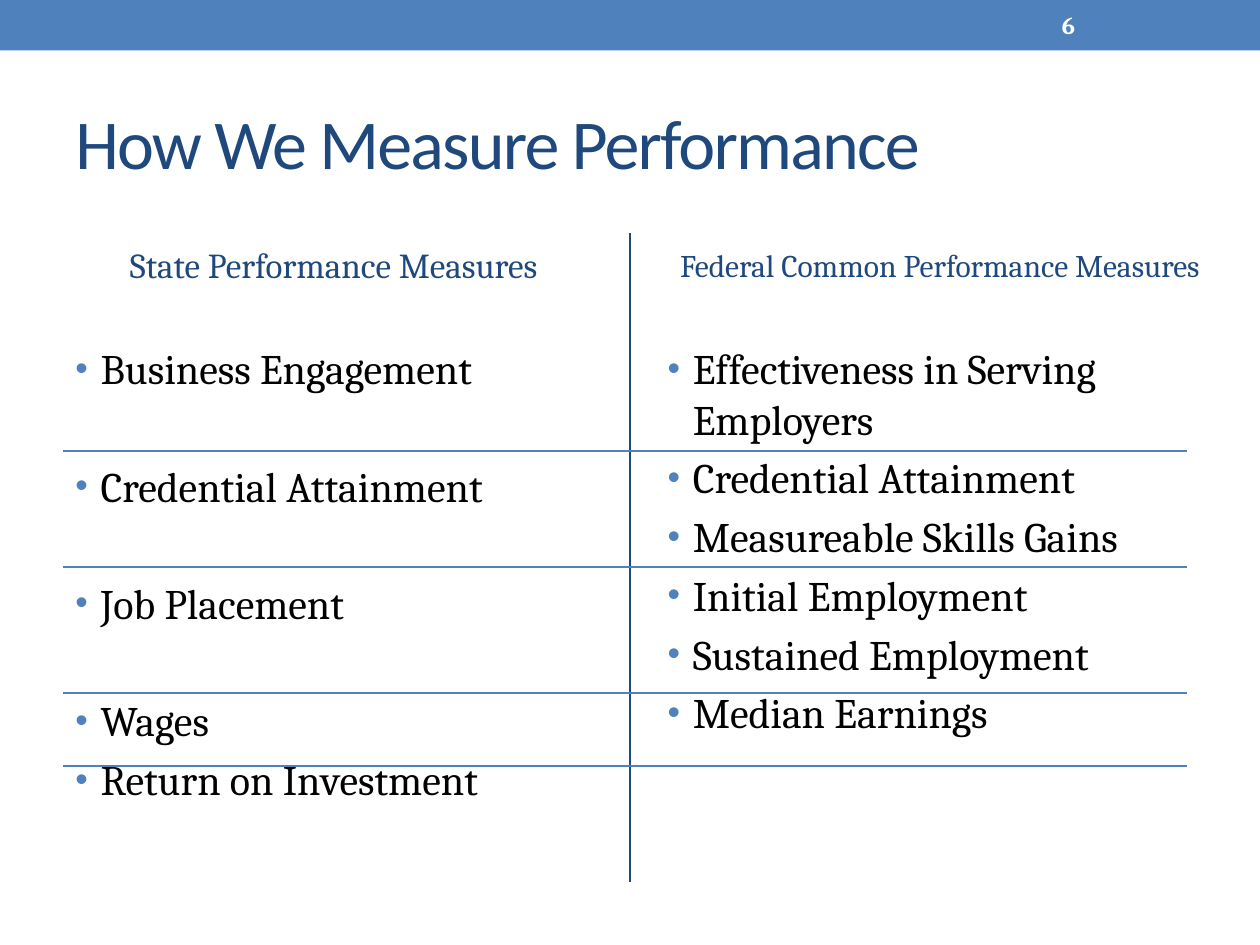
from dataclasses import dataclass

from lxml.etree import SubElement
from pptx import Presentation
from pptx.dml.color import RGBColor
from pptx.enum.shapes import MSO_CONNECTOR as Connector, MSO_SHAPE as Shape
from pptx.enum.text import MSO_ANCHOR as Anchor, PP_ALIGN as Align
from pptx.oxml.ns import qn
from pptx.util import Inches, Pt

TITLE = "How We Measure Performance"
PAGE_NUMBER = "6"
ROW_RULES = (3.58, 4.5, 5.5, 6.08)


@dataclass(frozen=True)
class Theme:
    blue: str = "4F81BD"
    navy: str = "1F497D"
    black: str = "000000"
    white: str = "FFFFFF"
    heading_font: str = "Calibri"
    body_font: str = "Cambria"
    title_size: float = 40
    body_size: float = 24
    number_size: float = 14
    tight_gap: float = 4.8
    row_gap: float = 38.3


THEME = Theme()

# Each item is its text and the space before it, in points.
COLUMNS = [
    {
        "heading": "State Performance Measures",
        "heading_area": (0.5, 1.75, 4.3, 0.7),
        "heading_size": 20,
        "list_area": (0.5, 2.67, 4.3, 4.32),
        "items": [
            ("Business Engagement", THEME.tight_gap),
            ("Credential Attainment", THEME.row_gap),
            ("Job Placement", THEME.row_gap),
            ("Wages", THEME.row_gap),
            ("Return on Investment", THEME.tight_gap),
        ],
    },
    {
        "heading": "Federal Common Performance Measures",
        "heading_area": (5.17, 1.75, 4.58, 0.7),
        "heading_size": 18,
        "list_area": (5.2, 2.67, 4.3, 4.32),
        "items": [
            (text, THEME.tight_gap)
            for text in (
                "Effectiveness in Serving Employers",
                "Credential Attainment",
                "Measureable Skills Gains",
                "Initial Employment",
                "Sustained Employment",
                "Median Earnings",
            )
        ],
    },
]


def color(value):
    return RGBColor.from_string(value)


def add_bullet(para):
    props = para._p.get_or_add_pPr()
    props.set("marL", str(Inches(0.2)))
    props.set("indent", str(Inches(-0.2)))
    bullet_color = SubElement(props, qn("a:buClr"))
    SubElement(bullet_color, qn("a:srgbClr"), val=THEME.blue)
    SubElement(props, qn("a:buSzPct"), val="85000")
    SubElement(props, qn("a:buFont"), typeface="Arial")
    SubElement(props, qn("a:buChar"), char="•")


def add_text(page, area, items, *, size, ink, font=THEME.body_font, bold=False,
             align=Align.LEFT, anchor=Anchor.MIDDLE, bullets=False, tracking=0):
    """Add a text box; items are (text, space before in points) pairs."""
    box = page.shapes.add_textbox(*map(Inches, area))
    frame = box.text_frame
    frame.word_wrap = True
    frame.vertical_anchor = anchor
    for index, (text, gap) in enumerate(items):
        para = frame.add_paragraph() if index else frame.paragraphs[0]
        para.alignment = align
        para.space_before = Pt(gap)
        if bullets:
            add_bullet(para)
        span = para.add_run()
        span.text = text
        span.font.name = font
        span.font.size = Pt(size)
        span.font.bold = bold
        span.font.color.rgb = color(ink)
        if tracking:
            span._r.get_or_add_rPr().set("spc", str(int(tracking * 100)))


def add_rule(page, start, end, ink, width):
    rule = page.shapes.add_connector(Connector.STRAIGHT, *map(Inches, start + end))
    rule.line.color.rgb = color(ink)
    rule.line.width = Pt(width)
    SubElement(rule._element.spPr, qn("a:effectLst"))


def add_band(page):
    band = page.shapes.add_shape(Shape.RECTANGLE, 0, 0, Inches(10), Inches(0.4))
    band.shadow.inherit = False
    band.fill.solid()
    band.fill.fore_color.rgb = color(THEME.blue)
    band.line.fill.background()


def main():
    deck = Presentation()
    deck.slide_width, deck.slide_height = Inches(10), Inches(7.5)
    page = deck.slides.add_slide(deck.slide_layouts[6])

    add_band(page)
    add_rule(page, (5, 1.85), (5, 7), THEME.navy, 1.5)
    add_text(page, (0.5, 0.58, 9, 1.08), [(TITLE, 0)], size=THEME.title_size,
             ink=THEME.navy, font=THEME.heading_font, tracking=-1)
    for column in COLUMNS:
        add_text(page, column["heading_area"], [(column["heading"], THEME.tight_gap)],
                 size=column["heading_size"], ink=THEME.navy, align=Align.CENTER)
        add_text(page, column["list_area"], column["items"], size=THEME.body_size,
                 ink=THEME.black, anchor=Anchor.TOP, bullets=True)
    for y in ROW_RULES:
        add_rule(page, (0.5, y), (9.42, y), THEME.blue, 0.75)
    add_text(page, (8.33, 0.02, 1.17, 0.36), [(PAGE_NUMBER, 0)],
             size=THEME.number_size, ink=THEME.white, bold=True)

    deck.save("out.pptx")


if __name__ == "__main__":
    main()
